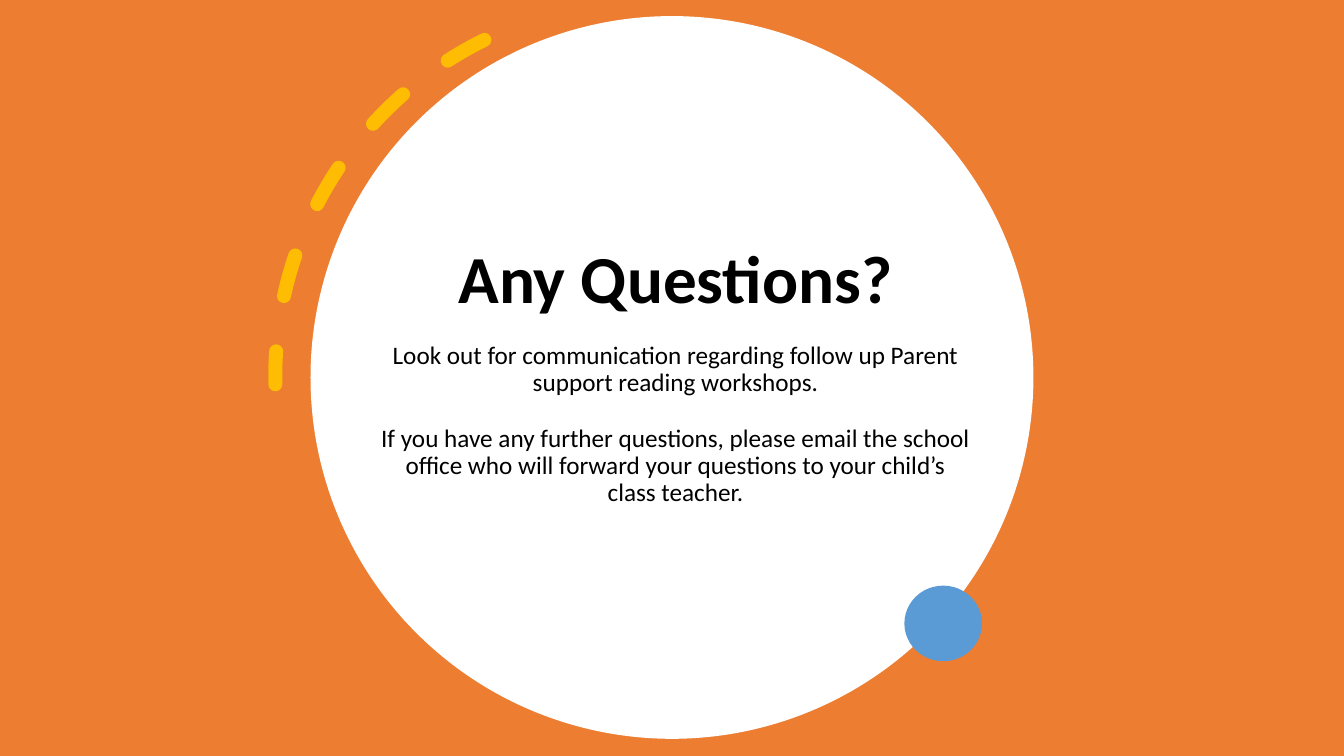
from lxml import etree
from pptx import Presentation
from pptx import util as u
from pptx.dml.color import RGBColor
from pptx.enum import dml, shapes, text
from pptx.oxml.ns import qn

COLORS = {"orange": "ED7D31", "white": "FFFFFF", "blue": "5B9BD5",
          "gold": "FFC000", "black": "000000"}

prs = Presentation()
prs.slide_width, prs.slide_height = u.Inches(13.33), u.Inches(7.5)
s = prs.slides.add_slide(prs.slide_layouts[5])


def add_filled(kind, left, top, width, height, color):
    sp = s.shapes.add_shape(kind, *map(u.Inches, (left, top, width, height)))
    sp.shadow.inherit = False
    sp.line.fill.background()
    sp.fill.solid()
    sp.fill.fore_color.rgb = RGBColor.from_string(COLORS[color])
    return sp


# Backdrop and disc
kinds = shapes.MSO_SHAPE
add_filled(kinds.RECTANGLE, 0, 0, 13.33, 7.5, "orange")
disc = add_filled(kinds.OVAL, 3.08, 0.16, 7.17, 7.17, "white")

# Closing message, stacked directly above the disc
title = s.shapes.title
disc._element.addnext(title._element)
title.left, title.top = u.Inches(3.66), u.Inches(2.6)
title.width, title.height = u.Inches(6.08), u.Inches(2.75)
tf = title.text_frame
tf.word_wrap = True
tf.auto_size = text.MSO_AUTO_SIZE.NONE
tf.vertical_anchor = text.MSO_ANCHOR.BOTTOM
tf.margin_bottom = u.Inches(0.32)

message = [
    ("Any Questions?", 48, True, 18),
    ("Look out for communication regarding follow up Parent support reading workshops.",
     18, False, 20),
    ("If you have any further questions, please email the school office who will "
     "forward your questions to your child’s class teacher.", 18, False, 0),
]
tf.text = "\n".join(words for words, *_ in message)
for p, (_, size, bold, gap) in zip(tf.paragraphs, message):
    p.alignment = text.PP_ALIGN.CENTER
    p.line_spacing = 0.9
    p.space_before, p.space_after = u.Pt(0), u.Pt(gap)
    p.font.name = "Calibri"
    p.font.size = u.Pt(size)
    p.font.bold = bold
    p.font.color.rgb = RGBColor.from_string(COLORS["black"])

# Dashed arc along the upper left of the disc
arc = s.shapes.add_shape(kinds.ARC, *map(u.Inches, (2.73, 0.01, 7.45, 7.45)))
arc.shadow.inherit = False
arc.fill.background()
arc.adjustments[0], arc.adjustments[1] = 162, 200.93
arc.rotation = 153.7
arc._element.spPr.find(qn("a:xfrm")).set("flipV", "1")
arc.line.color.rgb = RGBColor.from_string(COLORS["gold"])
arc.line.width = u.Pt(10)
arc.line.dash_style = dml.MSO_LINE.DASH
ln = arc._element.spPr.find(qn("a:ln"))
ln.set("cap", "rnd")
etree.SubElement(ln.find(".//" + qn("a:srgbClr")), qn("a:alpha"), val="95000")

# Accent dot
add_filled(kinds.OVAL, 8.97, 5.81, 0.77, 0.75, "blue")

prs.save("out.pptx")
